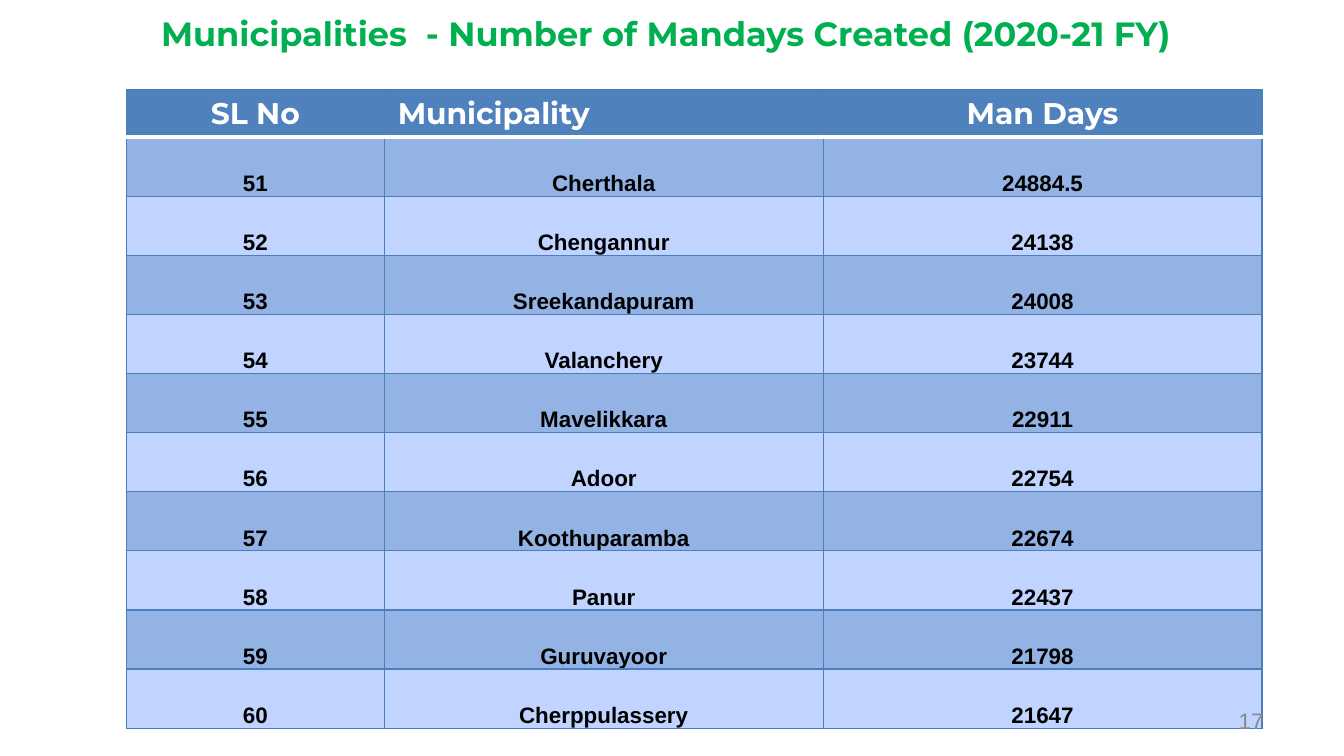
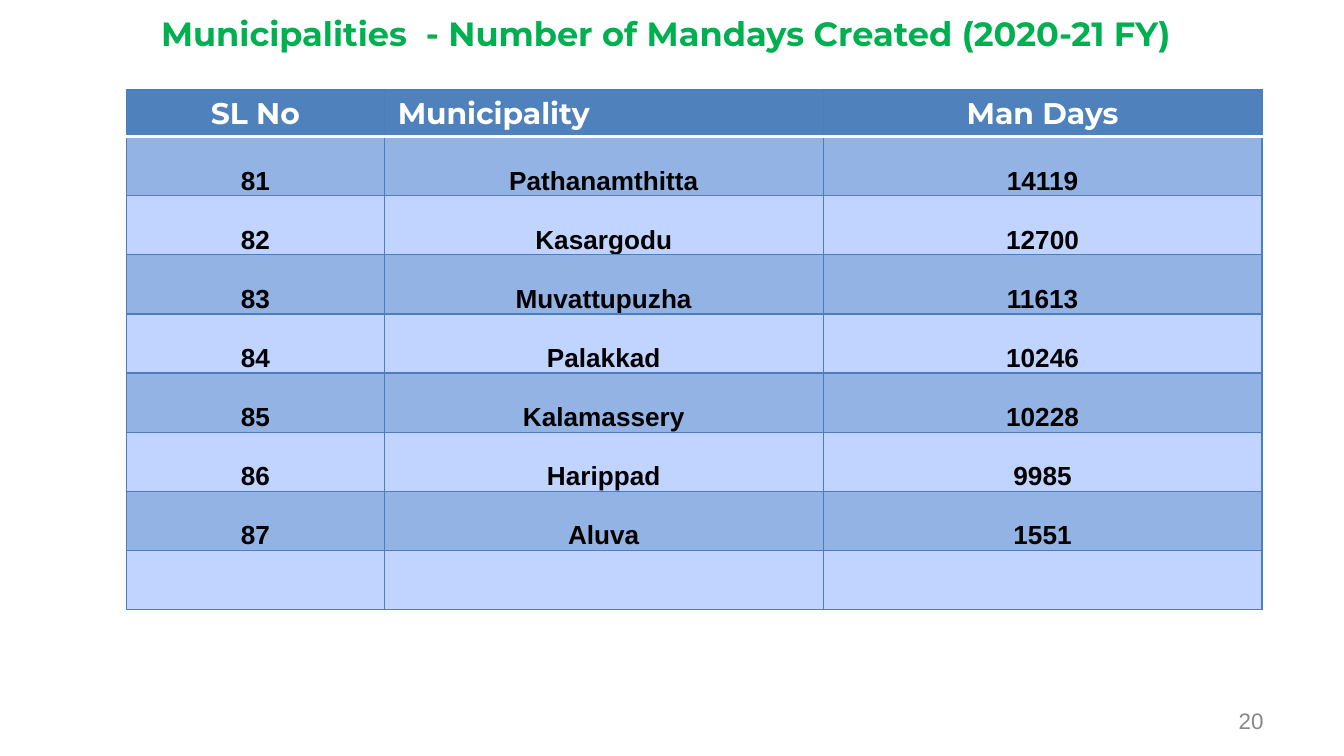
from dataclasses import dataclass

from lxml import etree
from pptx import Presentation
from pptx.dml.color import RGBColor
from pptx.enum.text import MSO_ANCHOR, PP_ALIGN
from pptx.oxml.ns import qn
from pptx.util import Emu, Pt

LEFT, CENTER, RIGHT = PP_ALIGN.LEFT, PP_ALIGN.CENTER, PP_ALIGN.RIGHT
TOP, MIDDLE, BOTTOM = MSO_ANCHOR.TOP, MSO_ANCHOR.MIDDLE, MSO_ANCHOR.BOTTOM

# Lengths are in px, 200 to the inch
EMU_PER_PX = 4572
SLIDE_WIDTH, SLIDE_HEIGHT = 2000, 1125
TABLE_LEFT, TABLE_TOP = 188, 134
COLUMN_WIDTHS = (384, 653, 653)
HEADER_HEIGHT, ROW_HEIGHT = 67, 88

WHITE = "FFFFFF"
HEADER_FILL = "4F81BD"
BAND_FILLS = ("93B3E5", "C0D4FF")
GRID_COLOR = "4B7EBC"

TITLE = "Municipalities  - Number of Mandays Created (2020-21 FY)"
HEADINGS = ("SL No", "Municipality", "Man Days")


@dataclass(frozen=True)
class TextStyle:
    font: str
    size: int
    color: str
    bold: bool
    align: PP_ALIGN
    anchor: MSO_ANCHOR
    margins: tuple[int, int, int, int]  # left, top, right, bottom


@dataclass(frozen=True)
class Box:
    left: int
    top: int
    width: int
    height: int


@dataclass(frozen=True)
class MandaysPage:
    number: int
    first_serial: int
    text_size: int
    records: tuple[tuple[str, str], ...]
    empty_rows: int = 0


TITLE_BOX = Box(92, 10, 1798, 86)
NUMBER_BOX = Box(1434, 1042, 466, 60)
TITLE_STYLE = TextStyle("Montserrat", 18, "00B050", True, CENTER, TOP, (20, 10, 20, 10))
NUMBER_STYLE = TextStyle("Arial", 12, "888888", False, RIGHT, MIDDLE, (20, 10, 20, 10))

PAGES = (
    MandaysPage(17, 51, 12, (
        ("Cherthala", "24884.5"),
        ("Chengannur", "24138"),
        ("Sreekandapuram", "24008"),
        ("Valanchery", "23744"),
        ("Mavelikkara", "22911"),
        ("Adoor", "22754"),
        ("Koothuparamba", "22674"),
        ("Panur", "22437"),
        ("Guruvayoor", "21798"),
        ("Cherppulassery", "21647"),
    )),
    MandaysPage(20, 81, 14, (
        ("Pathanamthitta", "14119"),
        ("Kasargodu", "12700"),
        ("Muvattupuzha", "11613"),
        ("Palakkad", "10246"),
        ("Kalamassery", "10228"),
        ("Harippad", "9985"),
        ("Aluva", "1551"),
    ), empty_rows=1),
)


def px(length: int) -> Emu:
    return Emu(length * EMU_PER_PX)


def rgb(color: str) -> RGBColor:
    return RGBColor.from_string(color)


def write_text(holder, text: str, style: TextStyle) -> None:
    """Write into a text box or a table cell; both carry margins and an anchor."""
    holder.margin_left, holder.margin_top, holder.margin_right, holder.margin_bottom = (
        px(margin) for margin in style.margins)
    holder.vertical_anchor = style.anchor
    holder.text = text
    paragraph = holder.paragraphs[0] if hasattr(holder, "paragraphs") else holder.text_frame.paragraphs[0]
    paragraph.alignment = style.align
    for run in paragraph.runs:
        run.font.name = style.font
        run.font.size = Pt(style.size)
        run.font.bold = style.bold
        run.font.color.rgb = rgb(style.color)


def add_text(slide, box: Box, text: str, style: TextStyle) -> None:
    shape = slide.shapes.add_textbox(px(box.left), px(box.top), px(box.width), px(box.height))
    shape.text_frame.word_wrap = True
    write_text(shape.text_frame, text, style)


def set_borders(cell, top: tuple[str, float], bottom: tuple[str, float]) -> None:
    side = (GRID_COLOR, 0.75)
    borders = {"a:lnL": side, "a:lnR": side, "a:lnT": top, "a:lnB": bottom}
    properties = cell._tc.get_or_add_tcPr()
    # Border lines come before the fill
    for index, (tag, (color, width)) in enumerate(borders.items()):
        line = etree.Element(qn(tag), w=str(Pt(width)))
        fill = etree.SubElement(line, qn("a:solidFill"))
        etree.SubElement(fill, qn("a:srgbClr"), val=color)
        properties.insert(index, line)


def add_mandays_table(slide, page: MandaysPage) -> None:
    rows = [HEADINGS]
    rows += [(str(serial), *record) for serial, record in enumerate(page.records, page.first_serial)]
    rows += [("", "", "")] * page.empty_rows
    height = HEADER_HEIGHT + ROW_HEIGHT * (len(rows) - 1)
    table = slide.shapes.add_table(
        len(rows), len(HEADINGS), px(TABLE_LEFT), px(TABLE_TOP),
        px(sum(COLUMN_WIDTHS)), px(height)).table
    table.horz_banding = False
    for column, width in zip(table.columns, COLUMN_WIDTHS):
        column.width = px(width)

    grid, divider = (GRID_COLOR, 0.75), (WHITE, 2)
    body_style = TextStyle("Arial", page.text_size, "000000", True, CENTER, BOTTOM, (2, 2, 2, 0))
    for row_index, values in enumerate(rows):
        is_header = row_index == 0
        table.rows[row_index].height = px(HEADER_HEIGHT if is_header else ROW_HEIGHT)
        for column_index, value in enumerate(values):
            cell = table.cell(row_index, column_index)
            style = body_style
            if is_header:
                align = LEFT if column_index == 1 else CENTER
                style = TextStyle("Montserrat", 16, WHITE, True, align, TOP, (20, 8, 20, 8))
            write_text(cell, value, style)
            cell.fill.solid()
            cell.fill.fore_color.rgb = rgb(HEADER_FILL if is_header else BAND_FILLS[(row_index - 1) % 2])
            set_borders(cell, divider if row_index == 1 else grid, divider if is_header else grid)


def main() -> None:
    presentation = Presentation()
    presentation.slide_width = px(SLIDE_WIDTH)
    presentation.slide_height = px(SLIDE_HEIGHT)
    blank_layout = presentation.slide_layouts[6]
    for page in PAGES:
        slide = presentation.slides.add_slide(blank_layout)
        add_mandays_table(slide, page)
        add_text(slide, NUMBER_BOX, str(page.number), NUMBER_STYLE)
        add_text(slide, TITLE_BOX, TITLE, TITLE_STYLE)
    presentation.save("out.pptx")


if __name__ == "__main__":
    main()
